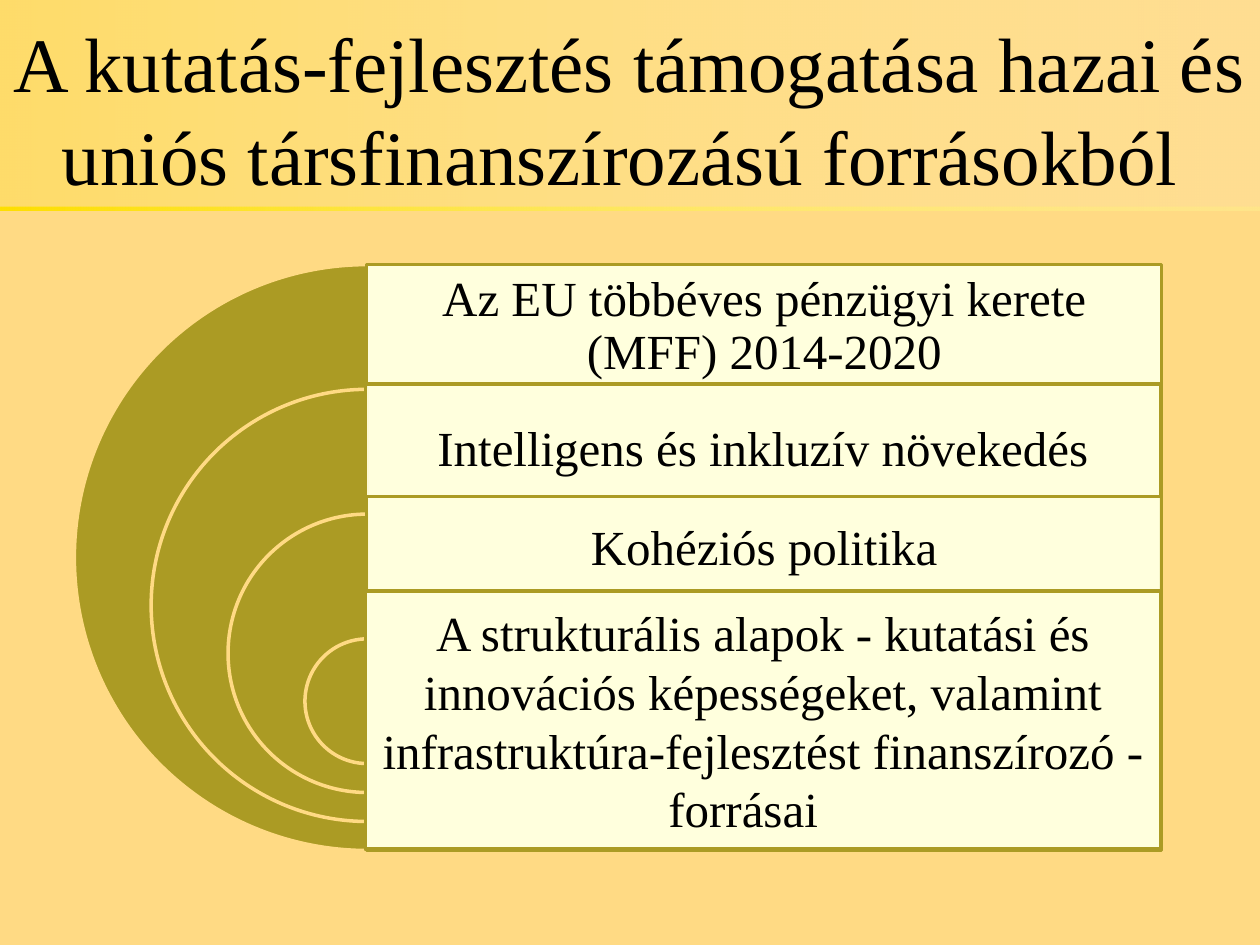
from dataclasses import dataclass

import pptx
import pptx.dml.color
import pptx.enum.shapes
import pptx.enum.text
import pptx.oxml
import pptx.oxml.ns
import pptx.util
from pptx.util import Inches

SHAPE = pptx.enum.shapes.MSO_SHAPE


@dataclass(frozen=True)
class Theme:
    font: str = "Times New Roman"
    background: str = "FFDA84"
    olive: str = "AB9B24"
    cream: str = "FFFFDD"
    title_fill: str = "FFDB95"
    gradient_start: str = "FEE002"
    gradient_end: str = "FFFF99"
    text: str = "000000"
    title_size: int = 44
    body_size: int = 28
    line_width: int = 2


THEME = Theme()


@dataclass(frozen=True)
class Band:
    text: str
    left: float
    top: float
    height: float
    text_height: float
    margin: float
    line_spacing: float = 1.0
    opacity: int = 100


BANDS = [
    Band("Az EU többéves pénzügyi kerete (MFF) 2014-2020",
         2.91, 2.1, 4.65, 0.99, 0.12, line_spacing=0.9),
    Band("Intelligens és inkluzív növekedés",
         2.9, 3.05, 1.64, 1.06, 0.12, line_spacing=0.9, opacity=90),
    Band("Kohéziós politika", 2.91, 3.94, 2.48, 0.78, 0.04, opacity=90),
    Band("A strukturális alapok - kutatási és innovációs képességeket, valamint "
         "infrastruktúra-fejlesztést finanszírozó - forrásai\t",
         2.9, 4.69, 2.05, 2.05, 0.04),
]


def rgb(value):
    return pptx.dml.color.RGBColor.from_string(value)


def set_opacity(color_element, percent):
    alpha = pptx.oxml.parse_xml(
        f'<a:alpha {pptx.oxml.ns.nsdecls("a")} val="{percent * 1000}"/>')
    color_element.append(alpha)


def add_filled(slide, kind, box, fill=None, line=None, opacity=100):
    shape = slide.shapes.add_shape(kind, *(Inches(value) for value in box))
    shape.shadow.inherit = False
    if fill:
        shape.fill.solid()
        shape.fill.fore_color.rgb = rgb(fill)
        if opacity < 100:
            set_opacity(shape.element.spPr.find(".//" + pptx.oxml.ns.qn("a:srgbClr")), opacity)
    if line:
        shape.line.color.rgb = rgb(line)
        shape.line.width = pptx.util.Pt(THEME.line_width)
    else:
        shape.line.fill.background()
    return shape


def write_text(shape, text, size, anchor, line_spacing=1.0):
    frame = shape.text_frame
    frame.word_wrap = True
    frame.vertical_anchor = anchor
    paragraph = frame.paragraphs[0]
    paragraph.alignment = pptx.enum.text.PP_ALIGN.CENTER
    paragraph.line_spacing = line_spacing
    run = paragraph.add_run()
    run.text = text
    run.font.name = THEME.font
    run.font.size = pptx.util.Pt(size)
    run.font.color.rgb = rgb(THEME.text)


def add_header(slide, left, top, width, height):
    # Gradient strip, showing as a thin rule below the title
    strip = add_filled(slide, SHAPE.RECTANGLE, (left, top, width, height))
    strip.fill.gradient()
    strip.fill.gradient_angle = 0
    stops = strip.fill.gradient_stops
    for stop, color in zip(stops, (THEME.gradient_start, THEME.gradient_end)):
        stop.color.rgb = rgb(color)
    stops[0].position, stops[1].position = 0, 1
    colors = strip.element.spPr.findall(".//" + pptx.oxml.ns.qn("a:srgbClr"))
    set_opacity(colors[-1], 30)

    # Title
    title = add_filled(slide, SHAPE.RECTANGLE, (left, top, width, height - 0.03),
                       THEME.title_fill, opacity=71)
    write_text(title, "A kutatás-fejlesztés támogatása hazai és uniós "
               "társfinanszírozású forrásokból ",
               THEME.title_size, pptx.enum.text.MSO_ANCHOR.BOTTOM)


def add_band(slide, band, width):
    add_filled(slide, SHAPE.RECTANGLE, (band.left, band.top, width, band.height),
               THEME.cream, THEME.olive, band.opacity)
    label = slide.shapes.add_textbox(Inches(band.left), Inches(band.top),
                                     Inches(width), Inches(band.text_height))
    frame = label.text_frame
    frame.margin_left = frame.margin_right = Inches(band.margin)
    frame.margin_top = frame.margin_bottom = Inches(band.margin)
    write_text(label, band.text, THEME.body_size,
               pptx.enum.text.MSO_ANCHOR.MIDDLE, band.line_spacing)


def add_nested_diagram(slide, left, top, diameter, band_width):
    # Each half disc shrinks around the same vertical axis
    shrink, drop = 1.22, 0.99
    for index, band in enumerate(BANDS):
        size = diameter - index * shrink
        disc = add_filled(slide, SHAPE.PIE,
                          (left + index * shrink / 2, top + index * drop, size, size),
                          THEME.olive, THEME.background)
        disc.adjustments[0] = 54
        disc.adjustments[1] = 162
        add_band(slide, band, band_width)


def main():
    presentation = pptx.Presentation()
    presentation.slide_width = Inches(10)
    presentation.slide_height = Inches(7.5)
    slide = presentation.slides.add_slide(presentation.slide_layouts[6])
    slide.background.fill.solid()
    slide.background.fill.fore_color.rgb = rgb(THEME.background)
    add_header(slide, 0, 0, 10, 1.67)
    add_nested_diagram(slide, 0.59, 2.1, 4.65, 6.31)
    presentation.save("out.pptx")


if __name__ == "__main__":
    main()
